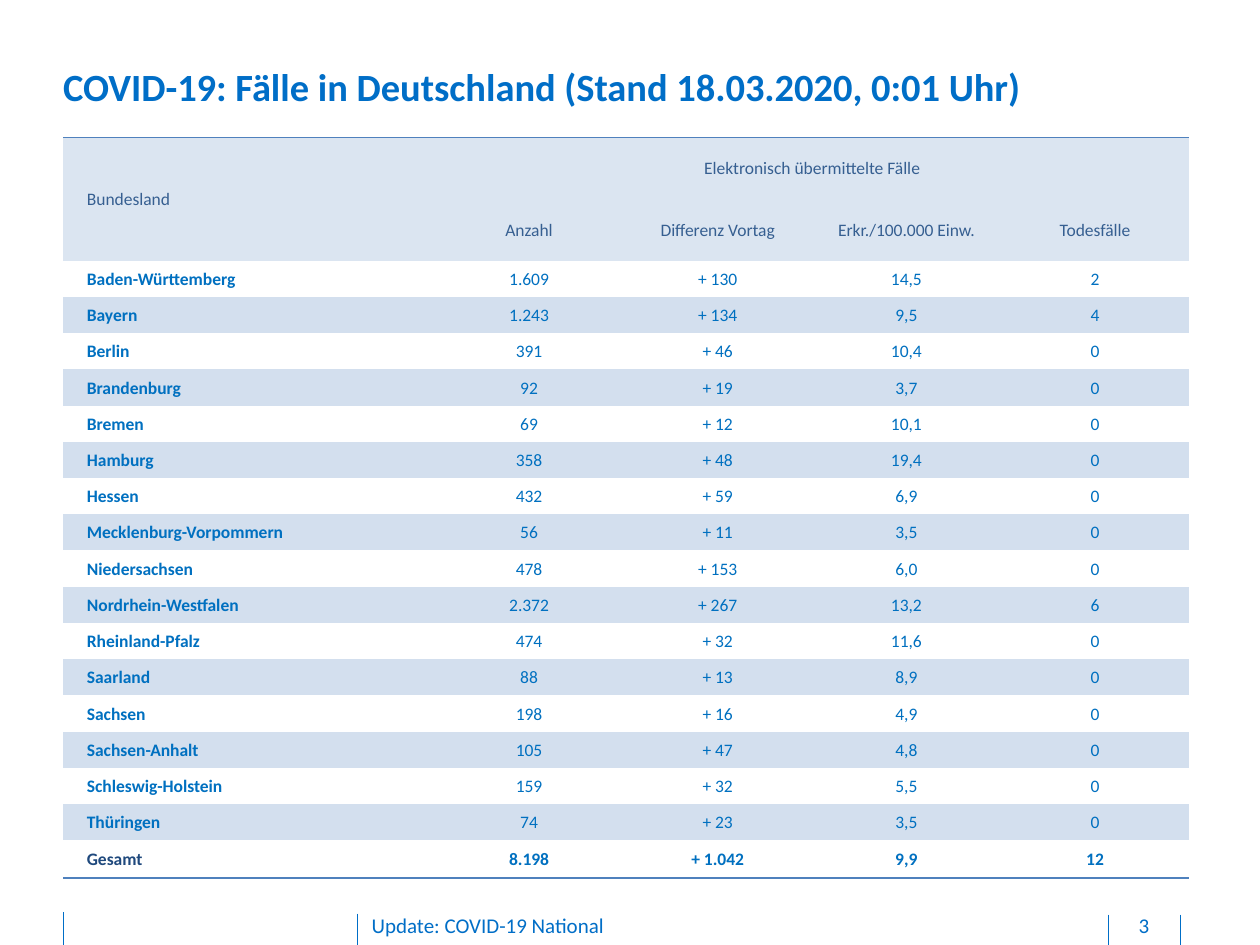
from lxml import etree
from pptx import Presentation
from pptx.dml.color import RGBColor
from pptx.enum.shapes import MSO_CONNECTOR
from pptx.enum.text import MSO_ANCHOR, PP_ALIGN
from pptx.oxml import parse_xml
from pptx.oxml.ns import nsdecls, qn
from pptx.util import Inches, Pt

STRAIGHT = MSO_CONNECTOR.STRAIGHT
LEFT, CENTER = PP_ALIGN.LEFT, PP_ALIGN.CENTER
TOP, MIDDLE = MSO_ANCHOR.TOP, MSO_ANCHOR.MIDDLE
NO_STYLE = "{2D5ABB26-0587-4C30-8999-92F81FD0307C}"
BLUE, CELL_BLUE, HEADER_BLUE, TOTAL_BLUE = "006EC7", "0070C0", "365F91", "1F497D"
HEADER_FILL, BAND_FILL, RULE_BLUE = "DBE5F1", "D3DFEE", "4F81BD"


def color(value):
    return RGBColor.from_string(value)


def write(frame, text, size=10, text_color=BLUE, bold=False, align=LEFT):
    frame.word_wrap = True
    paragraph = frame.paragraphs[0]
    paragraph.alignment = align
    run = paragraph.add_run()
    run.text = text
    run.font.name = "Calibri"
    run.font.size = Pt(size)
    run.font.bold = bold
    run.font.color.rgb = color(text_color)


states = [
    ("Baden-Württemberg", "1.609", "+ 130", "14,5", "2"),
    ("Bayern", "1.243", "+ 134", "9,5", "4"),
    ("Berlin", "391", "+ 46", "10,4", "0"),
    ("Brandenburg", "92", "+ 19", "3,7", "0"),
    ("Bremen", "69", "+ 12", "10,1", "0"),
    ("Hamburg", "358", "+ 48", "19,4", "0"),
    ("Hessen", "432", "+ 59", "6,9", "0"),
    ("Mecklenburg-Vorpommern", "56", "+ 11", "3,5", "0"),
    ("Niedersachsen", "478", "+ 153", "6,0", "0"),
    ("Nordrhein-Westfalen", "2.372", "+ 267", "13,2", "6"),
    ("Rheinland-Pfalz", "474", "+ 32", "11,6", "0"),
    ("Saarland", "88", "+ 13", "8,9", "0"),
    ("Sachsen", "198", "+ 16", "4,9", "0"),
    ("Sachsen-Anhalt", "105", "+ 47", "4,8", "0"),
    ("Schleswig-Holstein", "159", "+ 32", "5,5", "0"),
    ("Thüringen", "74", "+ 23", "3,5", "0"),
]
rows = [
    ("Bundesland", "Elektronisch übermittelte Fälle", "", "", ""),
    ("", "Anzahl", "Differenz Vortag", "Erkr./100.000 Einw.", "Todesfälle"),
    *states,
    ("Gesamt", "8.198", "+ 1.042", "9,9", "12"),
]

presentation = Presentation()
presentation.slide_width = Inches(10)
presentation.slide_height = Inches(7.5)
slide = presentation.slides.add_slide(presentation.slide_layouts[6])

for x, y in [(2.84, 7.25), (0.5, 7.24), (9.37, 7.26), (8.8, 7.26)]:
    divider = slide.shapes.add_connector(STRAIGHT, Inches(x), Inches(y), Inches(x), Inches(7.5))
    divider.line.color.rgb = color(BLUE)
    divider.line.width = Pt(0.5)
    etree.SubElement(divider._element.spPr, qn("a:effectLst"))

text_boxes = [
    ("COVID-19: Fälle in Deutschland (Stand 18.03.2020, 0:01 Uhr)",
     (0.5, 0.5, 8.85, 0.74), 0, dict(size=22, bold=True)),
    ("Update: COVID-19 National", (2.95, 7.24, 5.67, 0.21), 0.05, dict(size=12)),
    ("3", (8.81, 7.24, 0.54, 0.21), 0.05, dict(size=12, align=CENTER)),
]
for text, box, bottom_margin, text_format in text_boxes:
    frame = slide.shapes.add_textbox(*[Inches(length) for length in box]).text_frame
    frame.margin_left = frame.margin_right = frame.margin_top = 0
    frame.margin_bottom = Inches(bottom_margin)
    frame.vertical_anchor = TOP
    write(frame, text, **text_format)

table_width, table_height = Inches(8.94), Inches(5.88)
name_width, header_height, total_height = Inches(2.95), Inches(0.49), Inches(0.3)
last_row = len(rows) - 1
table = slide.shapes.add_table(
    len(rows), 5, Inches(0.5), Inches(1.09), table_width, table_height).table
table.first_row = table.horz_banding = False
table._tbl.tblPr.find(qn("a:tableStyleId")).text = NO_STYLE

for index, column in enumerate(table.columns):
    column.width = name_width if index == 0 else (table_width - name_width) // 4
state_height = (table_height - 2 * header_height - total_height) // len(states)
heights = [header_height] * 2 + [state_height] * len(states) + [total_height]
for row, height in zip(table.rows, heights):
    row.height = height
table.cell(0, 0).merge(table.cell(1, 0))
table.cell(0, 1).merge(table.cell(0, 4))

for row_index, values in enumerate(rows):
    is_header, is_total = row_index < 2, row_index == last_row
    for column_index, text in enumerate(values):
        is_name = column_index == 0
        cell = table.cell(row_index, column_index)
        cell.vertical_anchor = MIDDLE
        cell.margin_left = Inches(0.19 if is_name else 0.01)
        cell.margin_right = cell.margin_top = Inches(0.01)
        cell.margin_bottom = 0
        if is_header or row_index % 2:
            cell.fill.solid()
            cell.fill.fore_color.rgb = color(HEADER_FILL if is_header else BAND_FILL)
        else:
            cell.fill.background()
        if row_index in (0, last_row):
            edge = "lnB" if is_total else "lnT"
            cell._tc.get_or_add_tcPr().insert(0, parse_xml(
                f'<a:{edge} {nsdecls("a")} w="12700"><a:solidFill>'
                f'<a:srgbClr val="{RULE_BLUE}"/></a:solidFill></a:{edge}>'))
        if text:
            text_color = HEADER_BLUE if is_header else CELL_BLUE
            write(cell.text_frame, text,
                  text_color=TOTAL_BLUE if is_total and is_name else text_color,
                  bold=is_total or (is_name and not is_header),
                  align=LEFT if is_name else CENTER)
        else:
            cell.text_frame.paragraphs[0].font.size = Pt(10)

presentation.save("out.pptx")
